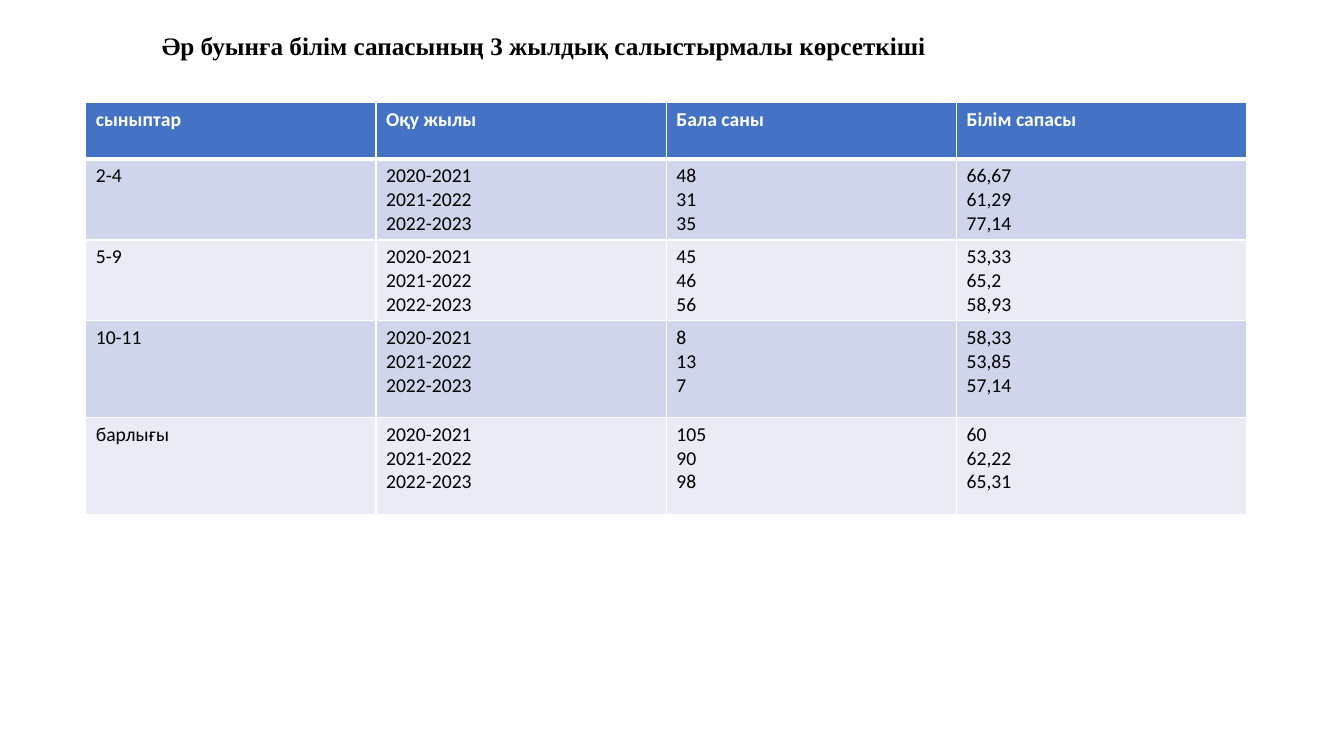
from dataclasses import dataclass

from lxml import etree
from pptx import Presentation, util as u
from pptx.dml.color import RGBColor
from pptx.enum import text
from pptx.oxml import ns


@dataclass(frozen=True)
class Theme:
    header: str = "4472C4"
    bands: tuple[str, str] = ("CFD5EA", "E9EBF5")
    white: str = "FFFFFF"
    black: str = "000000"
    title_font: str = "Times New Roman"
    table_font: str = "Calibri"
    title_size: float = 18
    table_size: float = 14
    thin: float = 1
    thick: float = 3


@dataclass(frozen=True)
class TableRow:
    height: float  # percent of the slide height
    cells: tuple[tuple[str, ...], ...]


THEME = Theme()
WIDTH, HEIGHT = u.Inches(13.33), u.Inches(7.5)
LEFT, TABLE_TOP, COLUMN_WIDTH = 6.38, 13.6, 21.6
YEARS = ("2020-2021", "2021-2022", "2022-2023")
TITLE = "Әр буынға білім сапасының 3 жылдық салыстырмалы көрсеткіші "
ROWS = (
    TableRow(7.47, (("сыныптар",), ("Оқу жылы",), ("Бала саны",), ("Білім сапасы",))),
    TableRow(10.53, (("2-4",), YEARS, ("48", "31", "35"), ("66,67", "61,29", "77,14"))),
    TableRow(10.53, (("5-9",), YEARS, ("45", "46", "56"), ("53,33", "65,2", "58,93"))),
    TableRow(12.8, (("10-11",), YEARS, ("8", "13", "7"), ("58,33", "53,85", "57,14"))),
    TableRow(12.8, (("барлығы",), YEARS, ("105", "90", "98"), ("60", "62,22", "65,31"))),
)


def across(percent: float) -> int:
    return round(WIDTH * percent / 100)


def down(percent: float) -> int:
    return round(HEIGHT * percent / 100)


def write_lines(frame, lines: tuple[str, ...], color: str, style: dict) -> None:
    """Put each line in its own paragraph, all in one style."""
    for index, line in enumerate(lines):
        para = frame.paragraphs[0] if index == 0 else frame.add_paragraph()
        span = para.add_run()
        span.text = line
        for name, value in style.items():
            setattr(span.font, name, value)
        span.font.color.rgb = RGBColor.from_string(color)


def add_borders(cell, widths: dict[str, float]) -> None:
    """Draw white cell edges ahead of the fill, as the schema orders them."""
    properties = cell._tc.get_or_add_tcPr()
    for index, (edge, width) in enumerate(widths.items()):
        line = etree.Element(ns.qn(f"a:{edge}"), w=str(u.Pt(width)))
        fill = etree.SubElement(line, ns.qn("a:solidFill"))
        etree.SubElement(fill, ns.qn("a:srgbClr"), val=THEME.white)
        properties.insert(index, line)


def add_title(page) -> None:
    box = page.shapes.add_textbox(across(LEFT), down(3.33), across(68.64), down(5.33))
    frame = box.text_frame
    frame.word_wrap = True
    style = {"name": THEME.title_font, "size": u.Pt(THEME.title_size), "bold": True}
    write_lines(frame, (TITLE,), THEME.black, style)
    frame.paragraphs[0].alignment = text.PP_ALIGN.CENTER


def add_results(page, rows: tuple[TableRow, ...]) -> None:
    columns = len(rows[0].cells)
    table = page.shapes.add_table(
        len(rows), columns, across(LEFT), down(TABLE_TOP),
        across(COLUMN_WIDTH * columns), down(sum(row.height for row in rows)),
    ).table
    for column in table.columns:
        column.width = across(COLUMN_WIDTH)
    for index, row in enumerate(rows):
        table.rows[index].height = down(row.height)
        is_header = index == 0
        fill = THEME.header if is_header else THEME.bands[(index - 1) % 2]
        color = THEME.white if is_header else THEME.black
        style = {"name": THEME.table_font, "size": u.Pt(THEME.table_size), "bold": is_header}
        widths = dict.fromkeys(("lnL", "lnR", "lnT", "lnB"), THEME.thin)
        if is_header:
            widths["lnB"] = THEME.thick
        elif index == 1:
            widths["lnT"] = THEME.thick
        for position, lines in enumerate(row.cells):
            cell = table.cell(index, position)
            cell.fill.solid()
            cell.fill.fore_color.rgb = RGBColor.from_string(fill)
            add_borders(cell, widths)
            write_lines(cell.text_frame, lines, color, style)


def main() -> None:
    deck = Presentation()
    deck.slide_width, deck.slide_height = WIDTH, HEIGHT
    page = deck.slides.add_slide(deck.slide_layouts[6])
    add_title(page)
    add_results(page, ROWS)
    deck.save("out.pptx")


if __name__ == "__main__":
    main()
